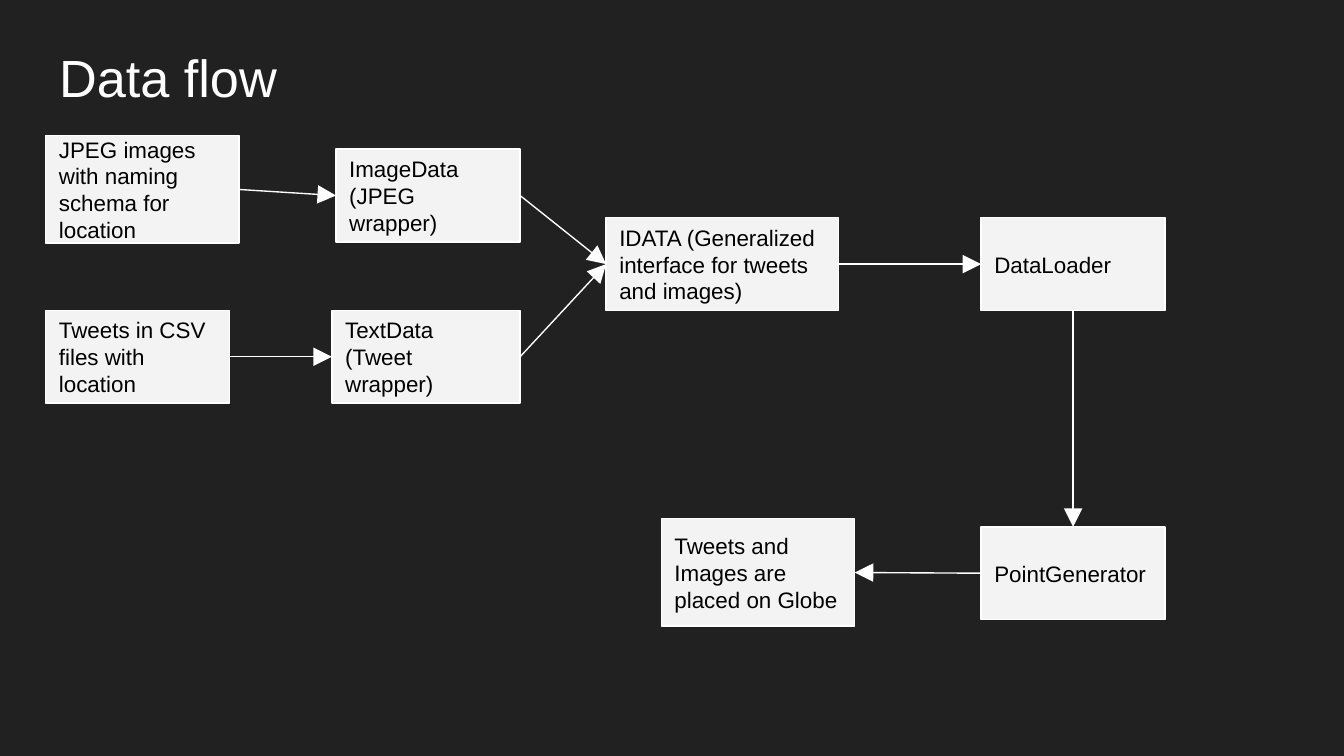
"""Build the data flow slide: boxes for each stage, joined by arrows."""

from dataclasses import dataclass

from pptx import Presentation
from pptx.dml.color import RGBColor
from pptx.enum.shapes import MSO_CONNECTOR, MSO_SHAPE
from pptx.enum.text import MSO_ANCHOR, MSO_AUTO_SIZE, PP_ALIGN
from pptx.oxml.ns import qn
from pptx.shapes.autoshape import Shape
from pptx.slide import Slide
from pptx.util import Inches, Pt
from lxml.etree import SubElement

TOP, LEFT, BOTTOM, RIGHT = range(4)


@dataclass(frozen=True)
class Theme:
    background: RGBColor = RGBColor(0x21, 0x21, 0x21)
    box: RGBColor = RGBColor(0xF3, 0xF3, 0xF3)
    light: RGBColor = RGBColor(0xFF, 0xFF, 0xFF)
    dark: RGBColor = RGBColor(0, 0, 0)
    font: str = "Arial"
    title_size: Pt = Pt(28)
    box_size: Pt = Pt(12)
    line_width: Pt = Pt(0.75)
    inset: Inches = Inches(0.1)


@dataclass(frozen=True)
class Stage:
    text: str
    left: float
    top: float
    width: float = 1.37
    height: float = 0.69


@dataclass(frozen=True)
class Flow:
    source: str
    target: str
    source_side: int = RIGHT
    target_side: int = LEFT


THEME = Theme()

STAGES = {
    "globe": Stage("Tweets and Images are placed on Globe", 4.92, 3.86, 1.44, 0.8),
    "jpeg": Stage("JPEG images with naming schema for location", 0.34, 1.01, 1.44, 0.8),
    "csv": Stage("Tweets in CSV files with location", 0.34, 2.31),
    "image_data": Stage("ImageData\n(JPEG wrapper)", 2.5, 1.11),
    "text_data": Stage("TextData (Tweet wrapper)", 2.47, 2.31, 1.4),
    "idata": Stage(
        "IDATA (Generalized interface for tweets and images)", 4.51, 1.62, 1.73
    ),
    "generator": Stage("PointGenerator", 7.3, 3.92),
    "loader": Stage("DataLoader", 7.3, 1.62),
}

FLOWS = [
    Flow("jpeg", "image_data"),
    Flow("csv", "text_data"),
    Flow("loader", "generator", BOTTOM, TOP),
    Flow("generator", "globe", LEFT, RIGHT),
    Flow("text_data", "idata"),
    Flow("image_data", "idata"),
    Flow("idata", "loader"),
]


def write_text(
    holder: Shape, text: str, *, size: Pt, color: RGBColor, anchor: MSO_ANCHOR
) -> None:
    """Fill a shape with left-aligned text, one paragraph per line."""
    frame = holder.text_frame
    frame.text = text
    frame.word_wrap = True
    frame.auto_size = MSO_AUTO_SIZE.NONE
    frame.vertical_anchor = anchor
    frame.margin_left = frame.margin_right = THEME.inset
    frame.margin_top = frame.margin_bottom = THEME.inset
    for paragraph in frame.paragraphs:
        paragraph.alignment = PP_ALIGN.LEFT
        paragraph.line_spacing = 1.0
        paragraph.font.name = THEME.font
        paragraph.font.size = size
        paragraph.font.color.rgb = color


def add_title(slide: Slide, text: str) -> None:
    """Place and format the title placeholder."""
    title = slide.shapes.title
    title.left, title.top = Inches(0.34), Inches(0.24)
    title.width, title.height = Inches(9.32), Inches(0.63)
    write_text(
        title, text, size=THEME.title_size, color=THEME.light, anchor=MSO_ANCHOR.TOP
    )


def add_stage(slide: Slide, stage: Stage) -> Shape:
    """Draw one stage of the flow as a labelled rectangle."""
    box = slide.shapes.add_shape(
        MSO_SHAPE.RECTANGLE,
        Inches(stage.left),
        Inches(stage.top),
        Inches(stage.width),
        Inches(stage.height),
    )
    box.shadow.inherit = False
    box.fill.solid()
    box.fill.fore_color.rgb = THEME.box
    box.line.color.rgb = THEME.light
    box.line.width = THEME.line_width
    write_text(
        box,
        stage.text,
        size=THEME.box_size,
        color=THEME.dark,
        anchor=MSO_ANCHOR.MIDDLE,
    )
    return box


def add_flow(slide: Slide, flow: Flow, boxes: dict[str, Shape]) -> None:
    """Join two stages with an arrow."""
    arrow = slide.shapes.add_connector(MSO_CONNECTOR.STRAIGHT, 0, 0, 0, 0)
    arrow.begin_connect(boxes[flow.source], flow.source_side)
    arrow.end_connect(boxes[flow.target], flow.target_side)
    arrow.line.color.rgb = THEME.light
    arrow.line.width = THEME.line_width
    outline = arrow.line._get_or_add_ln()
    SubElement(outline, qn("a:tailEnd"), type="triangle", w="lg", len="lg")
    SubElement(arrow._element.spPr, qn("a:effectLst"))


def main() -> None:
    """Build and save the presentation."""
    deck = Presentation()
    deck.slide_width = Inches(10)
    deck.slide_height = deck.slide_width * 9 // 16
    slide = deck.slides.add_slide(deck.slide_layouts.get_by_name("Title Only"))
    slide.background.fill.solid()
    slide.background.fill.fore_color.rgb = THEME.background
    add_title(slide, "Data flow")
    boxes = {name: add_stage(slide, stage) for name, stage in STAGES.items()}
    for flow in FLOWS:
        add_flow(slide, flow, boxes)
    deck.save("out.pptx")


if __name__ == "__main__":
    main()
